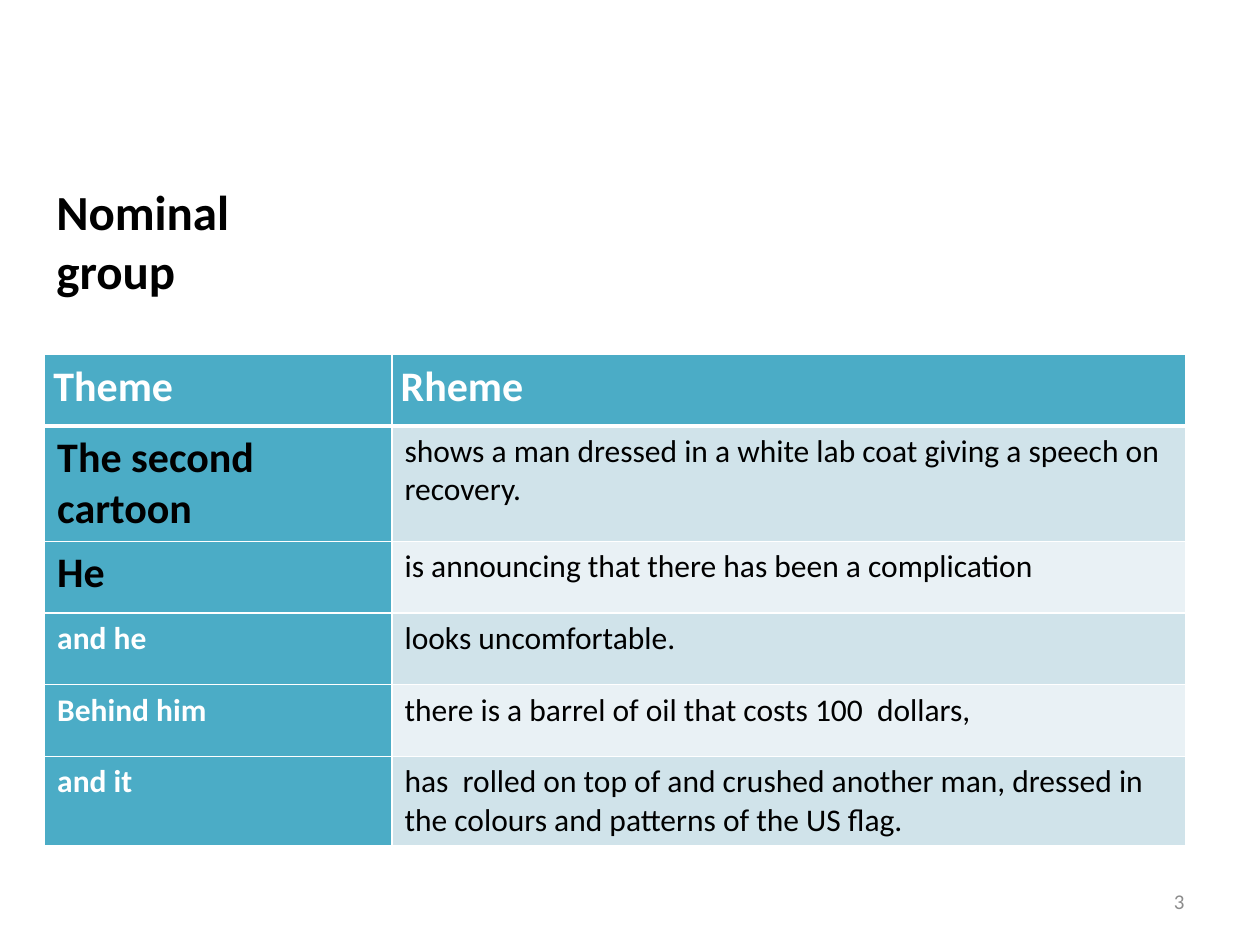
from lxml.etree import SubElement
from pptx import Presentation
from pptx.dml.color import RGBColor
from pptx.enum.text import MSO_ANCHOR, PP_ALIGN
from pptx.oxml.ns import qn
from pptx.util import Pt

FONT = "Calibri"
BLACK = RGBColor(0x00, 0x00, 0x00)
WHITE = RGBColor(0xFF, 0xFF, 0xFF)
GREY = RGBColor(0x8C, 0x8C, 0x8C)
TEAL = RGBColor(0x4B, 0xAC, 0xC6)
BAND_DARK = RGBColor(0xD0, 0xE3, 0xEA)
BAND_LIGHT = RGBColor(0xE9, 0xF1, 0xF5)

HEADER = ("Theme", "Rheme")
# Theme, rheme, and whether the theme is a nominal group
CLAUSES = [
    ("The second cartoon",
     "shows a man dressed in a white lab coat giving a speech on recovery.", True),
    ("He", "is announcing that there has been a complication", True),
    ("and he", "looks uncomfortable.", False),
    ("Behind him", "there is a barrel of oil that costs 100  dollars,", False),
    ("and it",
     "has  rolled on top of and crushed another man, dressed in the colours "
     "and patterns of the US flag.", False),
]
COLUMN_WIDTHS = (198.5, 453.5)
ROW_HEIGHTS = (41, 64, 41, 41, 41, 50)


def write(text_frame, text, size, color, bold=False, align=PP_ALIGN.LEFT):
    text_frame.text = text
    paragraph = text_frame.paragraphs[0]
    paragraph.alignment = align
    font = paragraph.font
    font.name, font.size, font.bold = FONT, Pt(size), bold
    font.color.rgb = color
    return paragraph


def set_borders(cell, top=1, bottom=1):
    properties = cell._tc.get_or_add_tcPr()
    for side, width in (("L", 1), ("R", 1), ("T", top), ("B", bottom)):
        line = SubElement(properties, qn(f"a:ln{side}"), w=str(Pt(width)))
        fill = SubElement(line, qn("a:solidFill"))
        SubElement(fill, qn("a:srgbClr"), val=str(WHITE))


def style_cell(cell, fill, **borders):
    set_borders(cell, **borders)
    cell.fill.solid()
    cell.fill.fore_color.rgb = fill


def add_title(slide, text):
    title = slide.shapes.title
    title.left, title.top, title.width, title.height = Pt(25), Pt(100), Pt(148), Pt(75)
    title.text_frame.word_wrap = True
    title.text_frame.vertical_anchor = MSO_ANCHOR.TOP
    write(title.text_frame, text, 28, BLACK, bold=True)


def add_clause_table(slide):
    table = slide.shapes.add_table(
        len(ROW_HEIGHTS), len(COLUMN_WIDTHS), Pt(25.5), Pt(202.5),
        Pt(sum(COLUMN_WIDTHS)), Pt(sum(ROW_HEIGHTS))).table
    for column, width in zip(table.columns, COLUMN_WIDTHS):
        column.width = Pt(width)
    for row, height in zip(table.rows, ROW_HEIGHTS):
        row.height = Pt(height)

    # Header row
    for index, text in enumerate(HEADER):
        cell = table.cell(0, index)
        style_cell(cell, TEAL, bottom=3)
        cell.margin_left = cell.margin_right = Pt(5)
        cell.margin_top = cell.margin_bottom = 0
        paragraph = write(cell.text_frame, text, 24, WHITE, True, PP_ALIGN.JUSTIFY)
        paragraph.line_spacing = 1.15

    # One row per clause, with nominal-group themes larger and black
    for row, (theme, rheme, nominal) in enumerate(CLAUSES, start=1):
        top = 3 if row == 1 else 1
        theme_cell, rheme_cell = table.cell(row, 0), table.cell(row, 1)
        style_cell(theme_cell, TEAL, top=top)
        style_cell(rheme_cell, BAND_DARK if row % 2 else BAND_LIGHT, top=top)
        size, color = (24, BLACK) if nominal else (18, WHITE)
        write(theme_cell.text_frame, theme, size, color, bold=True)
        write(rheme_cell.text_frame, rheme, 18, BLACK)


def add_page_number(slide, number):
    box = slide.shapes.add_textbox(Pt(516), Pt(500.5), Pt(168), Pt(28.75))
    box.text_frame.word_wrap = True
    box.text_frame.vertical_anchor = MSO_ANCHOR.MIDDLE
    write(box.text_frame, number, 12, GREY, align=PP_ALIGN.RIGHT)


def main():
    presentation = Presentation()
    presentation.slide_width, presentation.slide_height = Pt(720), Pt(540)
    slide = presentation.slides.add_slide(presentation.slide_layouts[5])
    add_title(slide, "Nominal group")
    add_clause_table(slide)
    add_page_number(slide, "3")
    presentation.save("out.pptx")


if __name__ == "__main__":
    main()
